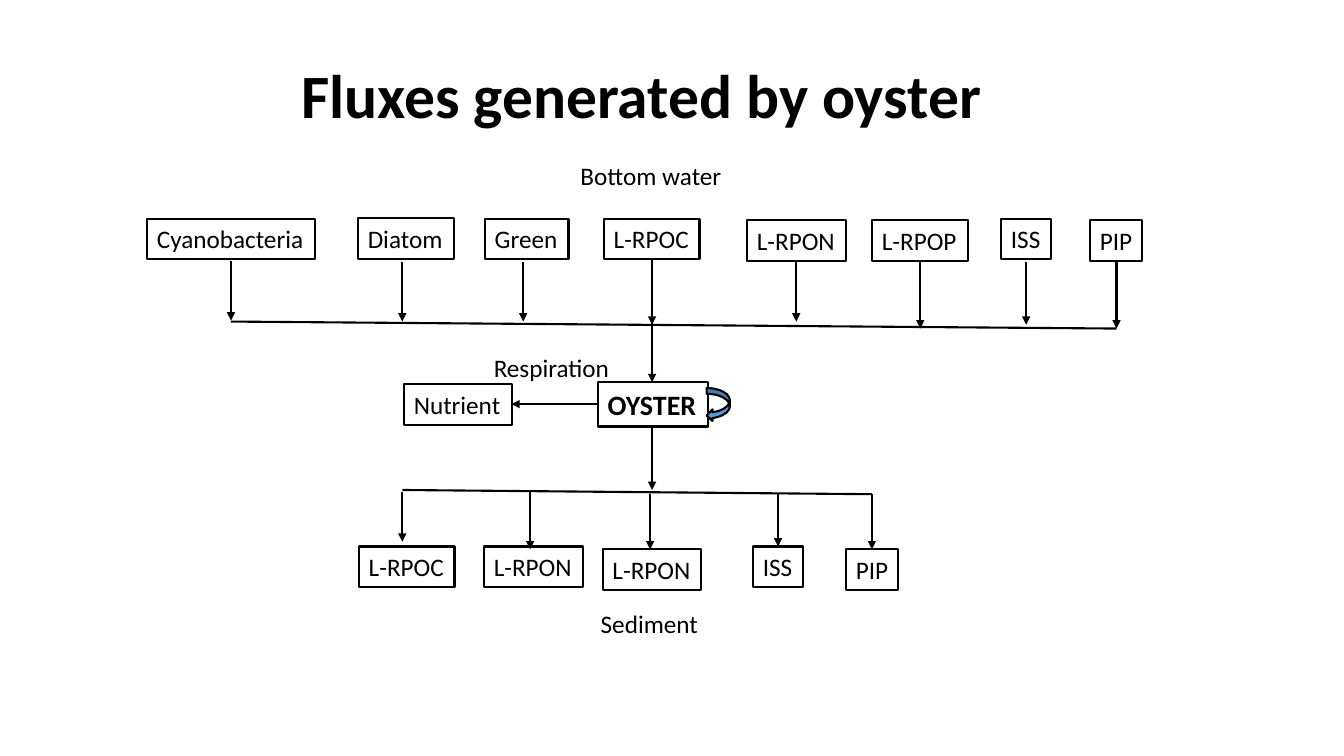
from dataclasses import dataclass

from lxml.etree import SubElement
from pptx import Presentation
from pptx.dml.color import RGBColor as Rgb
from pptx.enum.shapes import MSO_CONNECTOR as Link, MSO_SHAPE as Kind
from pptx.enum.text import MSO_ANCHOR as Anchor, MSO_AUTO_SIZE as Fit, PP_ALIGN as Align
from pptx.oxml.ns import qn
from pptx.util import Pt


@dataclass(frozen=True)
class Theme:
    font: str = "Calibri"
    ink: Rgb = Rgb(0, 0, 0)
    loop: Rgb = Rgb(0x5B, 0x9B, 0xD5)
    title: int = 44
    core: int = 20
    body: int = 18
    line: float = 1.5


class Sketch:
    def __init__(self, slide, theme):
        self.slide, self.theme = slide, theme

    def text(self, shape, words, size, bold=False):
        frame = shape.text_frame
        frame.word_wrap = False
        frame.auto_size = Fit.NONE
        frame.vertical_anchor = Anchor.TOP
        frame.text = words
        para = frame.paragraphs[0]
        para.alignment = Align.LEFT
        font = para.font
        font.name, font.size, font.bold = self.theme.font, Pt(size), bold
        font.color.rgb = self.theme.ink

    def title(self, words, x, y, w, h):
        shape = self.slide.shapes.title
        shape.left, shape.top, shape.width, shape.height = map(Pt, (x, y, w, h))
        self.text(shape, words, self.theme.title, True)

    def label(self, words, x, y, w, h=29):
        shape = self.slide.shapes.add_textbox(Pt(x), Pt(y), Pt(w), Pt(h))
        self.text(shape, words, self.theme.body)

    def shape(self, kind, x, y, w, h):
        shape = self.slide.shapes.add_shape(kind, Pt(x), Pt(y), Pt(w), Pt(h))
        shape.shadow.inherit = False
        shape.line.color.rgb = self.theme.ink
        shape.line.width = Pt(self.theme.line)
        return shape

    def box(self, words, x, y, w, h=29, size=None, bold=False):
        shape = self.shape(Kind.RECTANGLE, x, y, w, h)
        shape.fill.background()
        self.text(shape, words, size or self.theme.body, bold)

    def loop(self, x, y, w, h):
        shape = self.shape(Kind.CURVED_LEFT_ARROW, x, y, w, h)
        shape.fill.solid()
        shape.fill.fore_color.rgb = self.theme.loop

    def line(self, x1, y1, x2, y2, head=False):
        link = self.slide.shapes.add_connector(
            Link.STRAIGHT, Pt(x1), Pt(y1), Pt(x2), Pt(y2))
        link.line.color.rgb = self.theme.ink
        link.line.width = Pt(self.theme.line)
        props = link._element.spPr
        if head:
            SubElement(props.find(qn("a:ln")), qn("a:tailEnd"), type="triangle")
        SubElement(props, qn("a:effectLst"))

    def arrow(self, x1, y1, x2, y2):
        self.line(x1, y1, x2, y2, head=True)


# Name, box left, top and width, then arrow x, start and end
INFLOWS = [
    ("Cyanobacteria", 105, 156.2, 120.2, 165, 186.5, 229),
    ("Diatom", 255.6, 156, 68.4, 287.4, 187, 229.7),
    ("Green", 346.3, 156.2, 59.8, 373.7, 187, 229.7),
    ("L-RPOC", 431.3, 156.2, 68.4, 465.8, 186, 232),
    ("L-RPON", 533.5, 157.2, 70.6, 568.8, 186.5, 229.7),
    ("L-RPOP", 622.8, 157.2, 68.4, 657.4, 186.5, 234.7),
    ("ISS", 715, 156.2, 36, 733, 187, 232),
    ("PIP", 778.5, 157.2, 37.4, 797.5, 187, 234.7),
]
OUTFLOWS = [
    ("L-RPOC", 256.3, 390.4, 68.4, 287.4, 351.4, 387),
    ("L-RPON", 345.6, 390.4, 70.6, 378.7, 351.4, 392.4),
    ("L-RPON", 430.4, 392.4, 70.6, 464.4, 353, 392.4),
    ("ISS", 537.8, 390.4, 36, 555.8, 353, 390.4),
    ("PIP", 604.2, 392.4, 37.4, 622.8, 353, 392.4),
]


def main():
    deck = Presentation()
    deck.slide_width, deck.slide_height = Pt(960), Pt(540)
    theme = Theme()
    art = Sketch(deck.slides.add_slide(deck.slide_layouts[5]), theme)

    art.title("Fluxes generated by oyster", 208, 37.4, 505.5, 60.5)
    art.label("Bottom water", 407.5, 111, 116.6)
    art.label("Sediment", 422, 431.3, 85)

    for name, x, y, w, mid, start, end in INFLOWS + OUTFLOWS:
        art.box(name, x, y, w)
        art.arrow(mid, start, mid, end)
    art.line(165, 229.7, 797.5, 234.7)
    art.line(287.4, 350, 622.8, 353)

    art.box("OYSTER", 427, 273, 78.5, 31.7, theme.core, True)
    art.loop(504.8, 277.2, 16.6, 23.8)
    art.arrow(465.8, 231, 465.8, 273)
    art.arrow(465.8, 304.7, 465.8, 350)

    art.box("Nutrient", 288.5, 274.5, 77)
    art.label("Respiration", 345.6, 248.4, 98)
    art.arrow(427, 288.7, 365.3, 288.7)

    deck.save("out.pptx")


if __name__ == "__main__":
    main()
